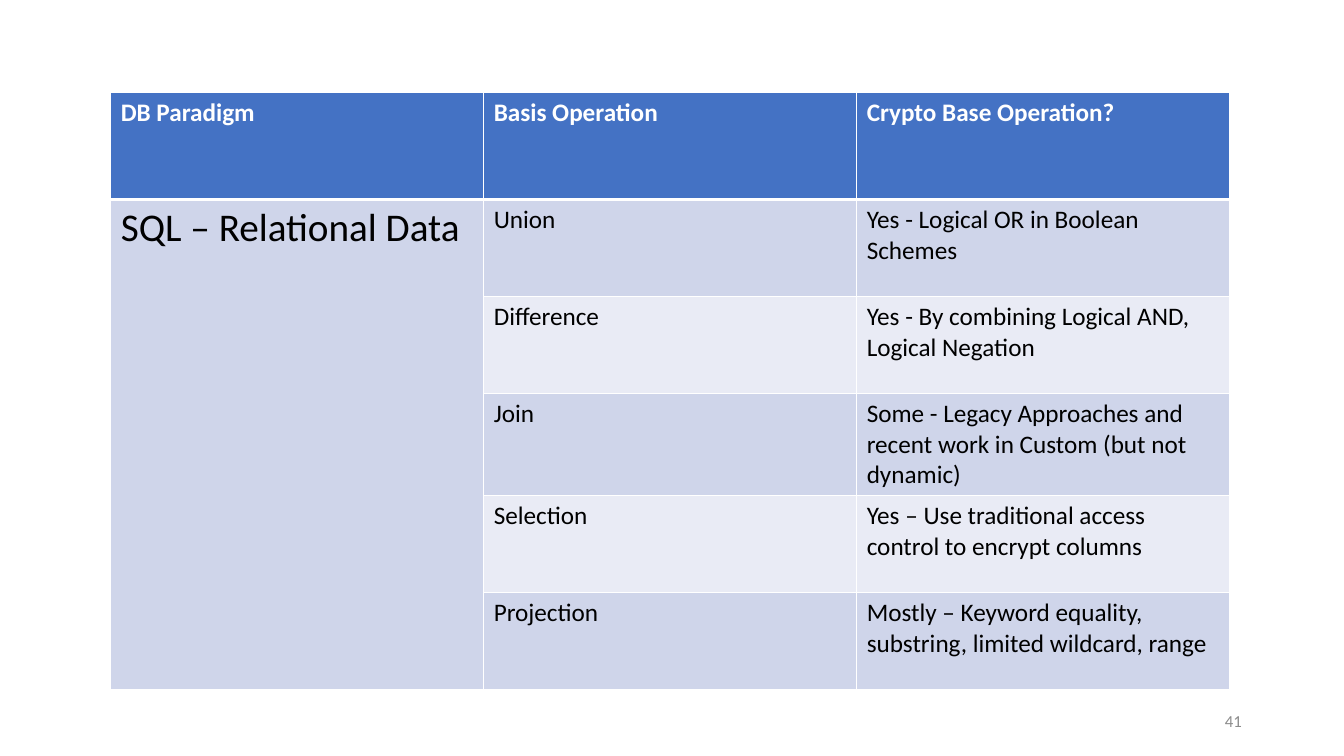
from lxml.etree import SubElement
from pptx import Presentation
from pptx.dml.color import RGBColor
from pptx.enum.text import MSO_ANCHOR, PP_ALIGN
from pptx.oxml.ns import qn
from pptx.util import Cm, Pt

HEADERS = ["DB Paradigm", "Basis Operation", "Crypto Base Operation?"]
PARADIGM = "SQL – Relational Data"
OPERATIONS = [
    ("Union", "Yes - Logical OR in Boolean Schemes"),
    ("Difference", "Yes - By combining Logical AND, Logical Negation"),
    ("Join", "Some - Legacy Approaches and recent work in Custom (but not dynamic)"),
    ("Selection", "Yes – Use traditional access control to encrypt columns"),
    ("Projection", "Mostly – Keyword equality, substring, limited wildcard, range"),
]
PAGE = "41"
FONT = "Calibri"
COLORS = {"header": "4472C4", "dark": "CFD5EA", "light": "E9EBF5",
          "white": "FFFFFF", "black": "000000", "gray": "8C8C8C"}
COL_W, HEAD_H, ROW_H = Cm(9.4), Cm(2.69), Cm(2.44)


def rgb(name):
    return RGBColor.from_string(COLORS[name])


def write(tf, text, size, color, bold=False):
    p = tf.paragraphs[0]
    r = p.add_run()
    r.text = text
    r.font.name, r.font.size, r.font.bold = FONT, Pt(size), bold
    r.font.color.rgb = rgb(color)
    return p


def add_borders(cell, top, bottom):
    tcPr = cell._tc.get_or_add_tcPr()
    for side, width in (("L", 1), ("R", 1), ("T", top), ("B", bottom)):
        ln = SubElement(tcPr, qn(f"a:ln{side}"), w=str(Pt(width)))
        fill = SubElement(ln, qn("a:solidFill"))
        SubElement(fill, qn("a:srgbClr"), val=COLORS["white"])


prs = Presentation()
prs.slide_width, prs.slide_height = Cm(33.87), Cm(19.05)
s = prs.slides.add_slide(prs.slide_layouts[6])

rows = [HEADERS] + [("", *operation) for operation in OPERATIONS]
rows[1] = (PARADIGM, *OPERATIONS[0])
n_rows, n_cols = len(rows), len(HEADERS)
table = s.shapes.add_table(n_rows, n_cols, Cm(2.79), Cm(2.34), COL_W * n_cols,
                           HEAD_H + ROW_H * len(OPERATIONS)).table
for col in table.columns:
    col.width = COL_W

for i, texts in enumerate(rows):
    table.rows[i].height = ROW_H if i else HEAD_H
    for j, text in enumerate(texts):
        cell = table.cell(i, j)
        add_borders(cell, 3 if i == 1 else 1, 1 if i else 3)
        shade = "header" if i == 0 else "dark" if i % 2 or j == 0 else "light"
        cell.fill.solid()
        cell.fill.fore_color.rgb = rgb(shade)
        if text:
            size = 28 if text == PARADIGM else 18
            write(cell.text_frame, text, size, "black" if i else "white", i == 0)
table.cell(1, 0).merge(table.cell(n_rows - 1, 0))

sp = s.shapes.add_textbox(Cm(23.93), Cm(17.65), Cm(7.62), Cm(1.02))
tf = sp.text_frame
tf.word_wrap = True
tf.vertical_anchor = MSO_ANCHOR.MIDDLE
write(tf, PAGE, 12, "gray").alignment = PP_ALIGN.RIGHT

prs.save("out.pptx")
